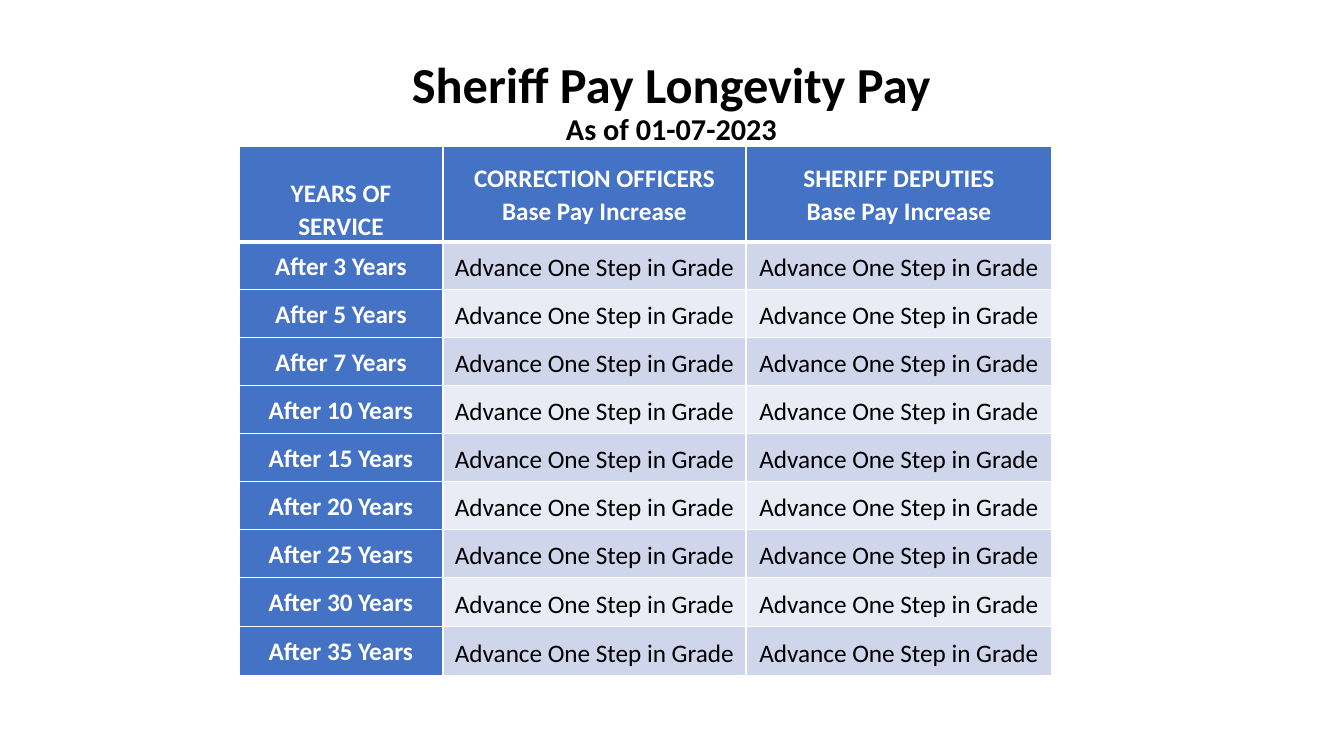
from lxml import etree
from pptx import Presentation, util as u
from pptx.dml.color import RGBColor
from pptx.enum import text
from pptx.oxml import ns

PX = 914400 / 100.8
FONT = "Calibri"
COLORS = {
    "white": "FFFFFF",
    "black": "000000",
    "blue": "4472C4",
    "band": "CFD5EA",
    "pale": "E9EBF5",
}
HEADERS = [
    "YEARS OF SERVICE",
    "CORRECTION OFFICERS\nBase Pay Increase",
    "SHERIFF DEPUTIES\nBase Pay Increase",
]
YEARS = [3, 5, 7, 10, 15, 20, 25, 30, 35]
COL_WIDTHS = [204, 303, 306]
ROW_HEIGHTS = [95] + [48] * 7 + [49] * 2


def px(n):
    return u.Emu(round(n * PX))


def rgb(name):
    return RGBColor.from_string(COLORS[name])


def format_paragraph(p, size, color, bold, spacing):
    p.alignment = text.PP_ALIGN.CENTER
    p.line_spacing = spacing
    for r in p.runs:
        r.font.name = FONT
        r.font.size = u.Pt(size)
        r.font.bold = bold
        r.font.color.rgb = rgb(color)


def add_title(s, lines, sizes):
    sp = s.shapes.title
    sp.left, sp.top, sp.width, sp.height = px(92), px(0), px(1159), px(147)
    tf = sp.text_frame
    tf.text = "\n".join(lines)
    tf.word_wrap = True
    tf.auto_size = text.MSO_AUTO_SIZE.NONE
    tf.vertical_anchor = text.MSO_ANCHOR.BOTTOM
    tf.margin_bottom = 0
    for p, size in zip(tf.paragraphs, sizes):
        format_paragraph(p, size, "black", True, 0.9)
        p.space_before = u.Pt(0)


def set_borders(cell, top, bottom):
    tc_pr = cell._tc.get_or_add_tcPr()
    for side, width in (("L", 1), ("R", 1), ("T", top), ("B", bottom)):
        ln = etree.SubElement(tc_pr, ns.qn(f"a:ln{side}"), w=str(u.Pt(width)))
        fill = etree.SubElement(ln, ns.qn("a:solidFill"))
        etree.SubElement(fill, ns.qn("a:srgbClr"), val=COLORS["white"])


def fill_cell(cell, words, row, col):
    label = row == 0 or col == 0
    set_borders(cell, 3 if row == 1 else 1, 3 if row == 0 else 1)
    cell.fill.solid()
    cell.fill.fore_color.rgb = rgb("blue" if label else "band" if row % 2 else "pale")
    cell.vertical_anchor = text.MSO_ANCHOR.MIDDLE
    cell.margin_left = cell.margin_right = px(7)
    cell.margin_top = px(30 if row == col == 0 else 0)
    cell.margin_bottom = 0
    cell.text_frame.text = words
    for p in cell.text_frame.paragraphs:
        format_paragraph(p, 18, "white" if label else "black", label, 1.07 if label else 1.15)


def add_pay_table(s, rows):
    frame = s.shapes.add_table(
        len(rows), len(COL_WIDTHS), px(239), px(146), px(sum(COL_WIDTHS)), px(sum(ROW_HEIGHTS))
    )
    table = frame.table
    for column, width in zip(table.columns, COL_WIDTHS):
        column.width = px(width)
    for row, height in zip(table.rows, ROW_HEIGHTS):
        row.height = px(height)
    for i, values in enumerate(rows):
        for j, words in enumerate(values):
            fill_cell(table.cell(i, j), words, i, j)


def main():
    """Build the longevity pay slide and save it."""
    prs = Presentation()
    prs.slide_width, prs.slide_height = px(1344), px(756)
    s = prs.slides.add_slide(prs.slide_layouts[5])
    add_title(s, ["Sheriff Pay Longevity Pay", "As of 01-07-2023"], [36, 21.6])
    steps = [[f"After {n} Years"] + ["Advance One Step in Grade"] * 2 for n in YEARS]
    add_pay_table(s, [HEADERS] + steps)
    prs.save("out.pptx")


if __name__ == "__main__":
    main()
